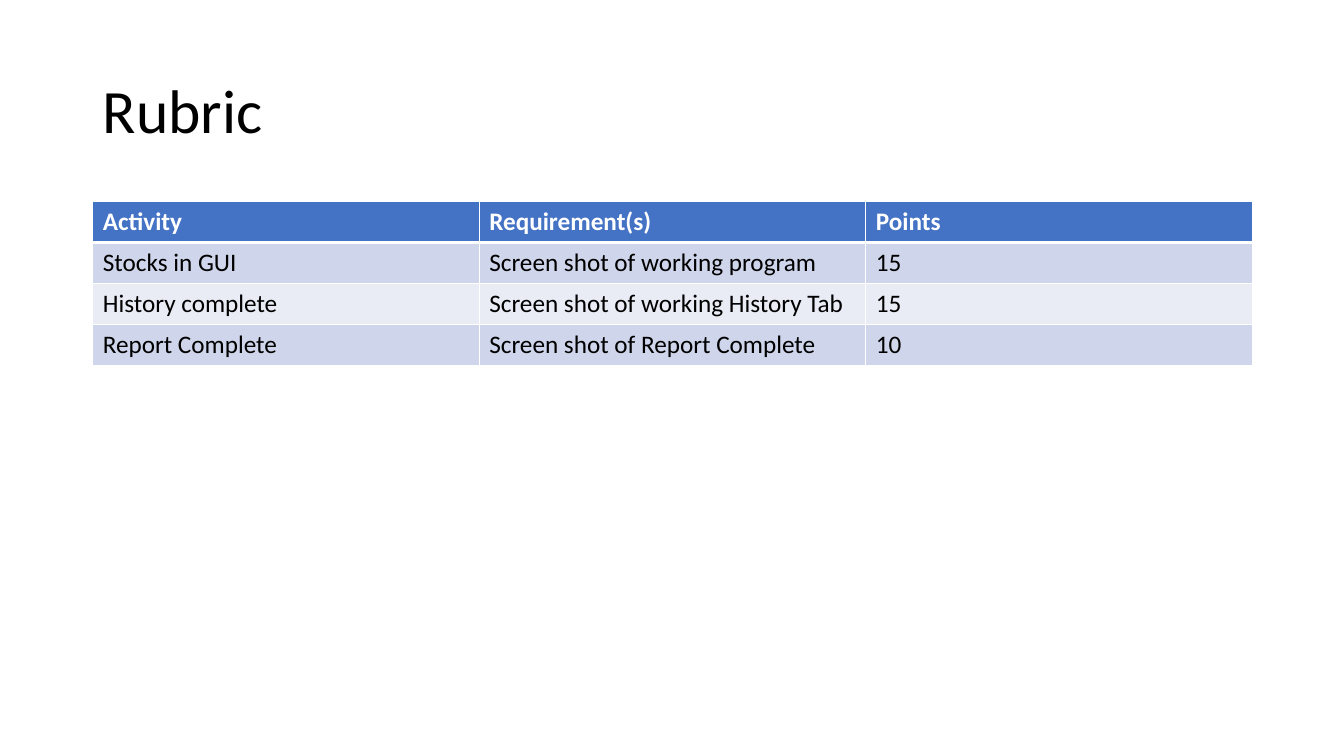
from lxml.etree import SubElement
from pptx import Presentation
from pptx.dml.color import RGBColor
from pptx.enum.text import MSO_ANCHOR, MSO_AUTO_SIZE, PP_ALIGN
from pptx.oxml.ns import qn
from pptx.util import Inches, Pt

WHITE = RGBColor(0xFF, 0xFF, 0xFF)
BLACK = RGBColor(0, 0, 0)
BLUE = RGBColor(0x44, 0x72, 0xC4)
BANDS = [RGBColor(0xE9, 0xEB, 0xF5), RGBColor(0xCF, 0xD5, 0xEA)]

ROWS = [
    ("Activity", "Requirement(s)", "Points"),
    ("Stocks in GUI", "Screen shot of working program", "15"),
    ("History complete", "Screen shot of working History Tab", "15"),
    ("Report Complete", "Screen shot of Report Complete", "10"),
]


class Deck:
    """Holds the text style and the current slide."""

    def __init__(self):
        self.show = Presentation()
        self.show.slide_width = Inches(13.33)
        self.show.slide_height = Inches(7.5)
        self.slide = self.show.slides.add_slide(self.show.slide_layouts[5])
        self.style = {"name": "Calibri", "bold": False}

    def label(self, frame, text, size, color, **extra):
        frame.text = text
        part = frame.paragraphs[0]
        part.alignment = PP_ALIGN.LEFT
        font = part.runs[0].font
        for key, value in {**self.style, "size": Pt(size), **extra}.items():
            setattr(font, key, value)
        font.color.rgb = color
        return part

    def title(self, text, left, top, width, height):
        shape = self.slide.shapes.title
        place = {"left": left, "top": top, "width": width, "height": height}
        for key, value in place.items():
            setattr(shape, key, Inches(value))
        frame = shape.text_frame
        self.label(frame, text, 44, BLACK).line_spacing = 0.9
        form = {"vertical_anchor": MSO_ANCHOR.MIDDLE, "word_wrap": True,
                "auto_size": MSO_AUTO_SIZE.NONE}
        for key, value in form.items():
            setattr(frame, key, value)

    def border(self, cell, side, width):
        props = cell._tc.get_or_add_tcPr()
        line = SubElement(props, qn(f"a:ln{side}"), w=str(Pt(width)))
        fill = SubElement(line, qn("a:solidFill"))
        SubElement(fill, qn("a:srgbClr"), val=str(WHITE))

    def table(self, rows, left, top, width, height):
        box = [Inches(size) for size in (left, top, width, height)]
        grid = self.slide.shapes.add_table(len(rows), len(rows[0]), *box).table
        for r, row in enumerate(rows):
            head = r == 0
            for c, text in enumerate(row):
                cell = grid.cell(r, c)
                self.label(cell.text_frame, text, 18,
                           WHITE if head else BLACK, bold=head)
                for side in "LRTB":
                    thick = (head and side == "B") or (r == 1 and side == "T")
                    self.border(cell, side, 3 if thick else 1)
                cell.fill.solid()
                cell.fill.fore_color.rgb = BLUE if head else BANDS[r % 2]


def main():
    deck = Deck()
    deck.title("Rubric", 0.92, 0.4, 11.5, 1.45)
    deck.table(ROWS, 0.92, 2, 11.5, 1.62)
    deck.show.save("out.pptx")


if __name__ == "__main__":
    main()
